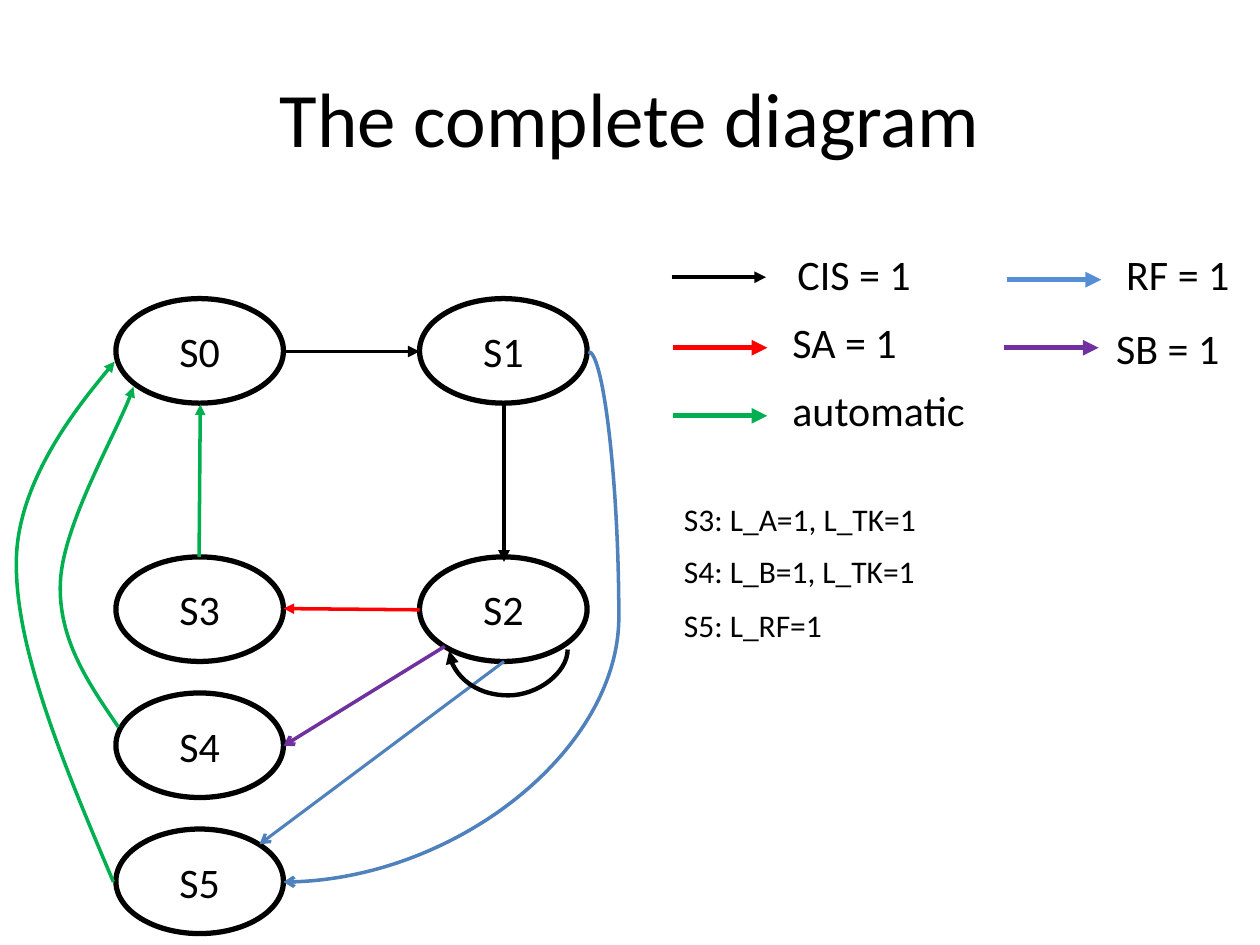
import dataclasses

import pptx
import pptx.dml.color
import pptx.enum.shapes
import pptx.enum.text
import pptx.oxml.ns
import pptx.util

Inches = pptx.util.Inches
Pt = pptx.util.Pt
qn = pptx.oxml.ns.qn
STRAIGHT = pptx.enum.shapes.MSO_CONNECTOR.STRAIGHT
CURVE = pptx.enum.shapes.MSO_CONNECTOR.CURVE


@dataclasses.dataclass(frozen=True)
class Theme:
    font: str = "Calibri"
    title: int = 44
    label: int = 24
    note: int = 18
    black: str = "000000"
    red: str = "FF0000"
    green: str = "00B050"
    purple: str = "7030A0"
    blue: str = "4F81BD"
    light_blue: str = "558ED5"


class StateSlide:
    def __init__(self, prs, theme):
        self.theme = theme
        self.s = prs.slides.add_slide(prs.slide_layouts[5])

    def set_text(self, tf, text, size, align=None):
        tf.text = text
        p = tf.paragraphs[0]
        p.alignment = align
        r = p.runs[0]
        r.font.name = self.theme.font
        r.font.size = Pt(size)
        r.font.color.rgb = pptx.dml.color.RGBColor.from_string(self.theme.black)

    def stroke(self, sp, color, width, tail=None):
        sp.line.color.rgb = pptx.dml.color.RGBColor.from_string(color)
        sp.line.width = Pt(width)
        if tail:
            ln = sp._element.spPr.find(qn("a:ln"))
            ln.append(ln.makeelement(qn("a:tailEnd"), {"type": tail}))

    def title(self, text, left, top, width, height):
        sp = self.s.shapes.title
        sp.left, sp.top = Inches(left), Inches(top)
        sp.width, sp.height = Inches(width), Inches(height)
        sp.text_frame.vertical_anchor = pptx.enum.text.MSO_ANCHOR.MIDDLE
        self.set_text(sp.text_frame, text, self.theme.title, pptx.enum.text.PP_ALIGN.CENTER)

    def state(self, name, left, top):
        sp = self.s.shapes.add_shape(
            pptx.enum.shapes.MSO_SHAPE.OVAL,
            Inches(left), Inches(top), Inches(1.33), Inches(0.83))
        sp.shadow.inherit = False
        sp.fill.background()
        self.stroke(sp, self.theme.black, 3)
        tf = sp.text_frame
        tf.word_wrap = False
        tf.vertical_anchor = pptx.enum.text.MSO_ANCHOR.MIDDLE
        self.set_text(tf, name, self.theme.label, pptx.enum.text.PP_ALIGN.CENTER)

    def text(self, text, left, top, width, height, size):
        sp = self.s.shapes.add_textbox(Inches(left), Inches(top), Inches(width), Inches(height))
        tf = sp.text_frame
        tf.word_wrap = False
        tf.auto_size = pptx.enum.text.MSO_AUTO_SIZE.SHAPE_TO_FIT_TEXT
        self.set_text(tf, text, size)

    def arrow(self, start, end, color, width, tail="triangle", kind=STRAIGHT):
        c = self.s.shapes.add_connector(kind, *map(Inches, start + end))
        self.stroke(c, color, width, tail)
        spPr = c._element.spPr
        spPr.append(spPr.makeelement(qn("a:effectLst"), {}))
        return c

    def curved_arrow(self, start, end, bend, color, width, tail="triangle", turn=0):
        c = self.arrow(start, end, color, width, tail, CURVE)
        spPr = c._element.spPr
        spPr.find(qn("a:xfrm")).set("rot", str(turn * 60000))
        guides = spPr.find(qn("a:prstGeom")).find(qn("a:avLst"))
        guides.append(guides.makeelement(
            qn("a:gd"), {"name": "adj1", "fmla": f"val {round(bend * 100000)}"}))

    def bezier_arrow(self, points, color, width):
        start, *rest = [(Inches(x), Inches(y)) for x, y in points]
        builder = self.s.shapes.build_freeform(*start)
        builder.add_line_segments(rest, close=False)
        sp = builder.convert_to_shape()
        sp.shadow.inherit = False
        sp.fill.background()
        self.stroke(sp, color, width, "triangle")
        outline = sp._element.spPr.find(".//" + qn("a:path"))
        lines = outline.findall(qn("a:lnTo"))
        for i in range(0, len(lines), 3):
            curve = outline.makeelement(qn("a:cubicBezTo"), {})
            for line in lines[i:i + 3]:
                curve.append(line[0])
                outline.remove(line)
            outline.append(curve)


def main():
    prs = pptx.Presentation()
    prs.slide_width, prs.slide_height = Inches(10), Inches(7.5)
    t = Theme()
    d = StateSlide(prs, t)
    d.title("The complete diagram", 0.5, 0.3, 9, 1.25)

    left, right = 0.92, 3.33
    for name, x, y in [
        ("S0", left, 2.37), ("S1", right, 2.37), ("S2", right, 4.42),
        ("S3", left, 4.42), ("S4", left, 5.5), ("S5", left, 6.58),
    ]:
        d.state(name, x, y)

    for start, end, color, width, tail in [
        ((4, 3.21), (4, 4.46), t.black, 2.25, "triangle"),
        ((2.25, 2.79), (3.33, 2.79), t.black, 2.25, "triangle"),
        ((3.33, 4.84), (2.25, 4.83), t.red, 2, "triangle"),
        ((1.58, 4.42), (1.59, 3.21), t.green, 2, "triangle"),
        ((3.53, 5.13), (2.25, 5.92), t.purple, 2, "arrow"),
        ((4, 5.25), (2.06, 6.7), t.blue, 1.75, "arrow"),
    ]:
        d.arrow(start, end, color, width, tail)

    d.curved_arrow((4.03, 4.69), (4.04, 5.63), 37, t.black, 2.5, turn=90)
    d.curved_arrow((4.67, 2.79), (2.25, 7), -0.1, t.blue, 2, "arrow")
    d.bezier_arrow([(0.94, 5.77), (0.7, 5.42), (0.46, 5.07), (0.48, 4.62),
                    (0.5, 4.17), (0.97, 3.36), (1.06, 3.07)], t.green, 2)
    d.bezier_arrow([(0.9, 7), (0.51, 6.08), (0.12, 5.15), (0.13, 4.46),
                    (0.13, 3.78), (0.91, 2.87), (0.91, 2.87)], t.green, 2)

    for label, x, y, color, width, text_x, text_y, text_width in [
        ("CIS = 1", 5.33, 2.2, t.black, 2.25, 6.23, 1.92, 1.11),
        ("SA = 1", 5.34, 2.76, t.red, 3, 6.19, 2.46, 1.04),
        ("automatic", 5.34, 3.3, t.green, 3, 6.19, 3, 1.58),
        ("RF = 1", 7.99, 2.22, t.light_blue, 3, 8.84, 1.92, 1.03),
        ("SB = 1", 7.97, 2.76, t.purple, 3, 8.76, 2.51, 1.03),
    ]:
        d.arrow((x, y), (x + 0.75, y), color, width)
        d.text(label, text_x, text_y, text_width, 0.51, t.label)

    for note, y, width in [
        ("S3: L_A=1, L_TK=1", 3.92, 2.42),
        ("S4: L_B=1, L_TK=1", 4.33, 2.42),
        ("S5: L_RF=1", 4.76, 1.56),
    ]:
        d.text(note, 5.33, y, width, 0.4, t.note)

    prs.save("out.pptx")


if __name__ == "__main__":
    main()
